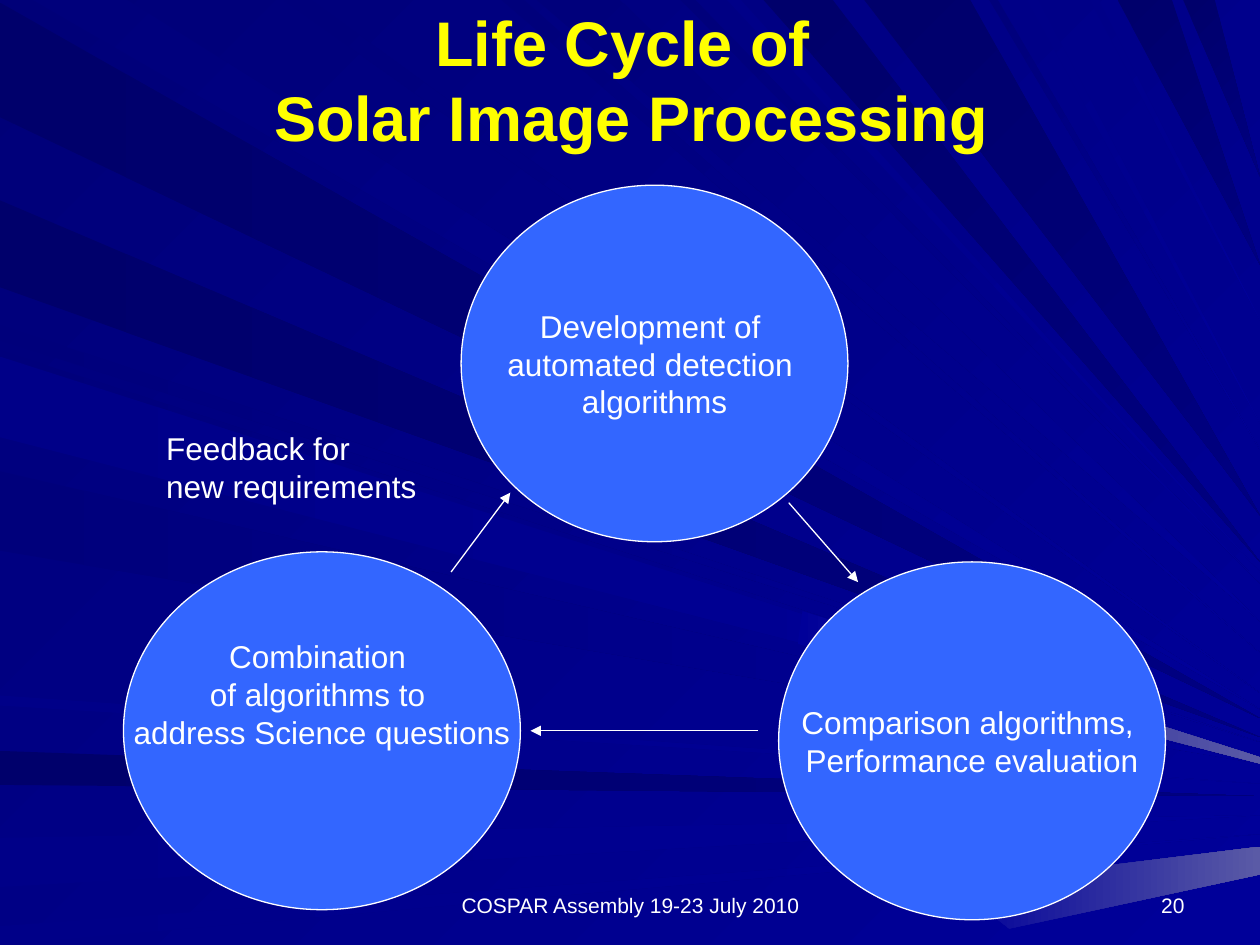
from dataclasses import dataclass

from lxml.etree import SubElement
from pptx import Presentation
from pptx.dml.color import RGBColor
from pptx.enum.shapes import MSO_CONNECTOR, MSO_SHAPE
from pptx.enum.text import MSO_ANCHOR, MSO_AUTO_SIZE, PP_ALIGN
from pptx.oxml.ns import qn
from pptx.util import Pt

PX = 9144  # EMU per px: 100 px to the inch
WIDTH, HEIGHT = 1000, 750


@dataclass(frozen=True)
class Theme:
    font: str = "Arial"
    title: str = "FFFF00"
    text: str = "FFFFFF"
    stage: str = "3366FF"
    background: tuple = ("000078", "000099", 45)
    deep_ray: tuple = ("00006B", "000080")
    bright_ray: tuple = ("00007B", "000099")
    faint_ray: tuple = ("000088", "000099")
    gleam: tuple = ("000099", "5A5AA6", 0)
    title_size: int = 36
    body_size: int = 18
    footer_size: int = 12
    line_width: float = 0.75


THEME = Theme()

TITLE = ("Life Cycle of \vSolar Image Processing", (51, 0, 900, 125))

# lines, box, extra space below the text
STAGES = [
    (["Development of ", "automated detection ", "algorithms"], (366, 147, 307, 283), 0),
    (["Comparison algorithms, ", "Performance evaluation"], (618, 446, 307, 284), 0),
    (["Combination ", "of algorithms to ", "address Science questions"], (98, 438, 315, 284), 58),
]

ARROWS = [((626, 399), (681, 462)), ((602, 580), (421, 580)), ((358, 454), (405, 391))]

FEEDBACK = (["Feedback for", "new requirements"], (122, 336, 219, 70))

FOOTERS = [
    ("COSPAR Assembly 19-23 July 2010", (342, 683, 317, 50), PP_ALIGN.CENTER),
    ("20", (717, 683, 233, 50), PP_ALIGN.RIGHT),
]

# start and end of the mouth on the left edge, height of the tip on the right edge
LEFT_RAYS = [
    (THEME.deep_ray, [(2, 93, 570), (596, 623, 632), (159, 228, 585)]),
    (THEME.bright_ray, [(258, 270, 589), (278, 342, 602), (374, 437, 606)]),
    (THEME.faint_ray, [(665, 704, 647), (735, 750, 662), (552, 560, 622), (283, 347, 604)]),
]

# the same for mouths on the top edge
TOP_RAYS = [
    (THEME.bright_ray, [(26, 101, 563), (398, 416, 518), (426, 492, 493), (540, 552, 463)]),
    (THEME.deep_ray, [(606, 661, 446), (887, 930, 210), (939, 964, 140), (686, 770, 409)]),
    (THEME.bright_ray, [(225, 247, 550), (785, 792, 357)]),
    (THEME.faint_ray, [(577, 588, 454), (815, 824, 336), (865, 872, 254)]),
]

GLEAMS = [
    [(756, 702), (WIDTH, 672), (WIDTH, 694), (801, 737)],
    [(637, 485), (WIDTH, 601), (WIDTH, 606), (633, 511)],
]


def rgb(value):
    return RGBColor.from_string(value)


def emu(lengths):
    return [length * PX for length in lengths]


def paint(fill, first, last, angle):
    """Fill with a clockwise linear gradient."""
    fill.gradient()
    fill.gradient_angle = -angle % 360
    for stop, colour in zip(fill.gradient_stops, (first, last)):
        stop.color.rgb = rgb(colour)


def outline(line):
    line.color.rgb = rgb(THEME.text)
    line.width = Pt(THEME.line_width)


def write(frame, lines, size, align, anchor, wrap=True, colour=THEME.text, bold=False):
    frame.word_wrap = wrap
    frame.vertical_anchor = anchor
    for index, line in enumerate(lines):
        paragraph = frame.paragraphs[0] if index == 0 else frame.add_paragraph()
        paragraph.text = line
        paragraph.alignment = align
        font = paragraph.font
        font.name, font.size, font.bold = THEME.font, Pt(size), bold
        font.color.rgb = rgb(colour)


def add_ray(shapes, corners, first, last, angle):
    builder = shapes.build_freeform(*corners[0], scale=PX)
    builder.add_line_segments(corners[1:], close=True)
    ray = builder.convert_to_shape()
    ray.shadow.inherit = False
    ray.line.fill.background()
    paint(ray.fill, first, last, angle)


def add_rays(shapes):
    for colours, rays in LEFT_RAYS:
        for start, end, tip in rays:
            add_ray(shapes, [(0, start), (0, end), (WIDTH, tip)], *colours, 0)
    for colours, rays in TOP_RAYS:
        for start, end, tip in rays:
            add_ray(shapes, [(start, 0), (end, 0), (WIDTH, tip)], *colours, 45)
    for corners in GLEAMS:
        add_ray(shapes, corners, *THEME.gleam)


def add_stage(shapes, lines, box, space_below):
    stage = shapes.add_shape(MSO_SHAPE.OVAL, *emu(box))
    stage.shadow.inherit = False
    stage.fill.solid()
    stage.fill.fore_color.rgb = rgb(THEME.stage)
    outline(stage.line)
    stage.text_frame.margin_bottom += space_below * PX
    write(stage.text_frame, lines, THEME.body_size, PP_ALIGN.CENTER, MSO_ANCHOR.MIDDLE, wrap=False)


def add_arrow(shapes, start, end):
    arrow = shapes.add_connector(MSO_CONNECTOR.STRAIGHT, *emu(start + end))
    outline(arrow.line)
    properties = arrow.element.spPr
    SubElement(properties.find(qn("a:ln")), qn("a:tailEnd"), type="triangle")
    SubElement(properties, qn("a:effectLst"))


def main():
    deck = Presentation()
    deck.slide_width, deck.slide_height = emu((WIDTH, HEIGHT))
    slide = deck.slides.add_slide(deck.slide_layouts[5])
    shapes = slide.shapes
    paint(slide.background.fill, *THEME.background)

    add_rays(shapes)
    for stage in STAGES:
        add_stage(shapes, *stage)
    for arrow in ARROWS:
        add_arrow(shapes, *arrow)

    lines, box = FEEDBACK
    feedback = shapes.add_textbox(*emu(box)).text_frame
    write(feedback, lines, THEME.body_size, PP_ALIGN.LEFT, MSO_ANCHOR.TOP, wrap=False)
    feedback.auto_size = MSO_AUTO_SIZE.SHAPE_TO_FIT_TEXT

    heading, box = TITLE
    title = shapes.title
    title.left, title.top, title.width, title.height = emu(box)
    write(title.text_frame, [heading], THEME.title_size, PP_ALIGN.CENTER, MSO_ANCHOR.MIDDLE,
          colour=THEME.title, bold=True)
    title.text_frame.auto_size = MSO_AUTO_SIZE.NONE
    title.element.getparent().append(title.element)  # in front of the rays

    for footer, box, align in FOOTERS:
        frame = shapes.add_textbox(*emu(box)).text_frame
        write(frame, [footer], THEME.footer_size, align, MSO_ANCHOR.BOTTOM)

    deck.save("out.pptx")


if __name__ == "__main__":
    main()
